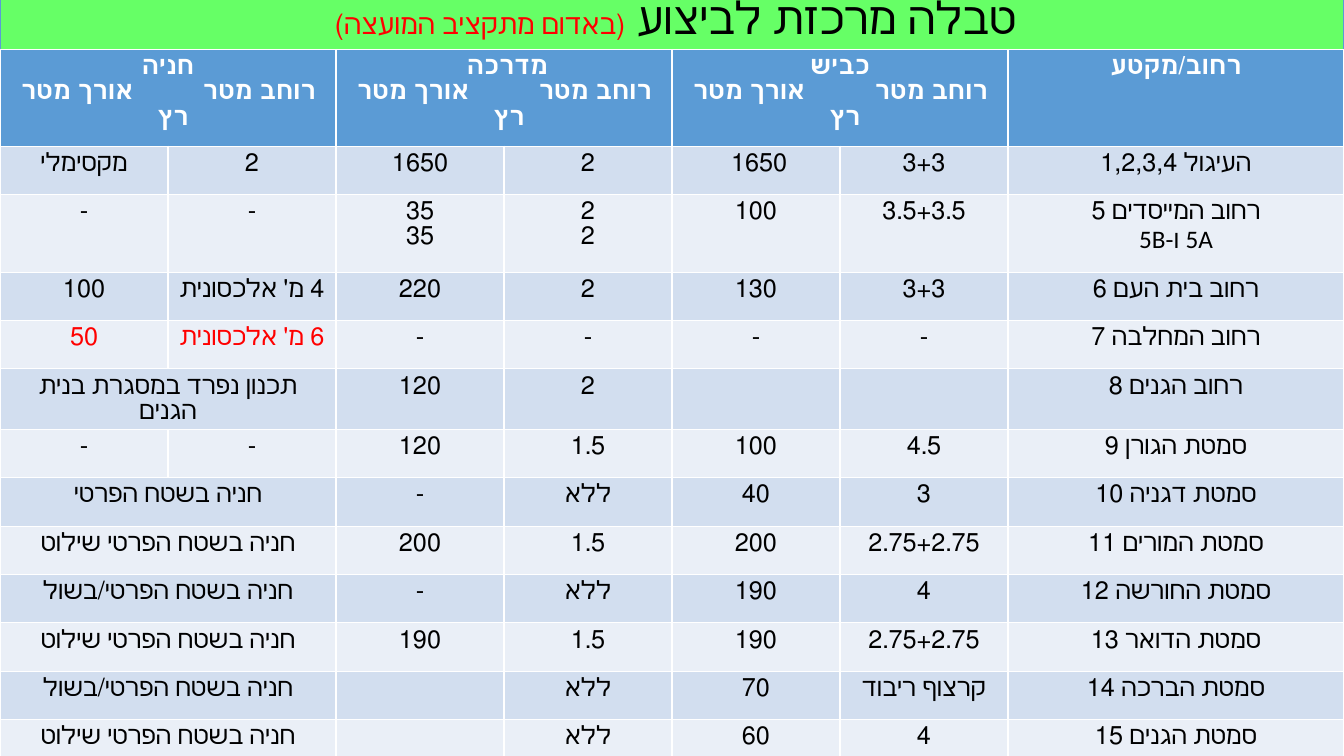
from pptx import Presentation
from pptx import util as u
from pptx.dml.color import RGBColor
from pptx.enum import lang, text
from pptx.oxml import parse_xml
from pptx.oxml.ns import nsdecls

FONT = "Calibri"
BLACK, WHITE, RED = "000000", "FFFFFF", "FF0000"
GREEN, BLUE, BANDS = "66FF66", "5B9BD5", ("D2DEEF", "EAEFF7")
WIDTH, HEIGHT, TABLE_TOP = 13.33, 7.5, 0.49
UNIT = WIDTH / 8
COLUMN_UNITS = [1] * 6 + [2]
HEADER_H, ROW_H, TALL_ROW, TALL_H = 0.96, 0.48, 2, 0.77
GROUPS = ["חניה", "מדרכה ", "כביש"]
MEASURES = "רוחב מטר\tאורך מטר"
MERGED = None
ROWS = [
    ["מקסימלי", "2", "1650", "2", "1650 ", "3+3", "העיגול 1,2,3,4"],
    ["-", "-", "35\n35", "2\n2", "100", "3.5+3.5", "רחוב המייסדים 5\n5A ו-5B"],
    ["100", "4 מ' אלכסונית", "220", "2", "130", "3+3", "רחוב בית העם 6"],
    ["50", "6 מ' אלכסונית", "-", "-", "-", "-", "רחוב המחלבה 7"],
    ["תכנון נפרד במסגרת בנית הגנים", MERGED, "120", "2", "", "", "רחוב הגנים 8"],
    ["-", "-", "120", "1.5", "100", "4.5", "סמטת הגורן 9"],
    ["חניה בשטח הפרטי", MERGED, "-", "ללא", "40", "3", "סמטת דגניה 10"],
    ["חניה בשטח הפרטי שילוט", MERGED, "200", "1.5", "200", "2.75+2.75", "סמטת המורים 11"],
    ["חניה בשטח הפרטי/בשול", MERGED, "-", "ללא", "190", "4", "סמטת החורשה 12"],
    ["חניה בשטח הפרטי שילוט", MERGED, "190", "1.5", "190", "2.75+2.75", "סמטת הדואר 13"],
    ["חניה בשטח הפרטי/בשול", MERGED, "", "ללא", "70", "קרצוף ריבוד", "סמטת הברכה 14"],
    ["חניה בשטח הפרטי שילוט", MERGED, "", "ללא", "60", "4", "סמטת הגנים 15"],
]
RED_CELLS = {(4, 0), (4, 1)}


def rgb(value):
    """Turn a hex string into a colour."""
    return RGBColor.from_string(value)


def paint(fill, color):
    """Give a fill one solid colour."""
    fill.solid()
    fill.fore_color.rgb = rgb(color)


def set_rtl(p, align=text.PP_ALIGN.CENTER):
    """Make a paragraph run from right to left."""
    p.alignment = align
    p._p.get_or_add_pPr().set("rtl", "1")


def add_run(p, words, size, color, bold=False):
    """Add one formatted Hebrew run to a paragraph."""
    r = p.add_run()
    r.text = words
    r.font.name, r.font.size, r.font.bold = FONT, u.Pt(size), bold
    r.font.color.rgb = rgb(color)
    r.font.language_id = lang.MSO_LANGUAGE_ID.HEBREW


def add_tab_stop(p, margin, position):
    """Indent a right-to-left paragraph and set its tab stop."""
    pPr = p._p.get_or_add_pPr()
    for side in ("marL", "marR"):
        pPr.set(side, str(u.Inches(margin)))
    pPr.append(parse_xml(f'<a:tabLst {nsdecls("a")}><a:tab algn="r" '
                         f'pos="{u.Inches(position)}"/></a:tabLst>'))


def fill_cell(cell, lines, fill, color, bold=False):
    """Colour a cell and write its lines, spreading a tabbed line."""
    paint(cell.fill, fill)
    tf = cell.text_frame
    for i, line in enumerate(lines):
        p = tf.add_paragraph() if i else tf.paragraphs[0]
        tabbed = "\t" in line
        set_rtl(p, text.PP_ALIGN.RIGHT if tabbed else text.PP_ALIGN.CENTER)
        if tabbed:
            add_tab_stop(p, 0.1, 1.81)
        if line:
            add_run(p, line, 18, color, bold)


def add_title(s):
    """Format the title placeholder as the green band."""
    sp = s.shapes.title
    sp.left, sp.top = 0, u.Inches(-0.01)
    sp.width, sp.height = u.Inches(WIDTH), u.Inches(0.5)
    paint(sp.fill, GREEN)
    sp.line.color.rgb, sp.line.width = rgb(BLUE), u.Pt(0.75)
    tf = sp.text_frame
    tf.word_wrap, tf.auto_size = True, text.MSO_AUTO_SIZE.NONE
    tf.vertical_anchor = text.MSO_ANCHOR.BOTTOM
    p = tf.paragraphs[0]
    set_rtl(p)
    p.line_spacing = 0.9
    add_run(p, "טבלה מרכזת לביצוע ", 32, BLACK)
    add_run(p, "(באדום מתקציב המועצה) ", 20, RED)


def add_works_table(s):
    """Add the table of streets with its header and merged cells."""
    table = s.shapes.add_table(
        len(ROWS) + 1, len(COLUMN_UNITS), 0, u.Inches(TABLE_TOP),
        u.Inches(WIDTH), u.Inches(HEIGHT - TABLE_TOP)).table
    for column, units in zip(table.columns, COLUMN_UNITS):
        column.width = u.Inches(units * UNIT)
    for i, row in enumerate(table.rows):
        row.height = u.Inches({0: HEADER_H, TALL_ROW: TALL_H}.get(i, ROW_H))
    for i, group in enumerate(GROUPS):
        cell = table.cell(0, 2 * i)
        cell.merge(table.cell(0, 2 * i + 1))
        fill_cell(cell, [group, MEASURES, "רץ"], BLUE, WHITE, True)
    fill_cell(table.cell(0, 6), ["רחוב/מקטע"], BLUE, WHITE, True)
    for i, row in enumerate(ROWS, 1):
        for j, words in enumerate(row):
            if words is MERGED:
                table.cell(i, j - 1).merge(table.cell(i, j))
                continue
            color = RED if (i, j) in RED_CELLS else BLACK
            fill_cell(table.cell(i, j), words.split("\n"), BANDS[(i - 1) % 2], color)


def main():
    """Build the slide and save it."""
    prs = Presentation()
    prs.slide_width, prs.slide_height = u.Inches(WIDTH), u.Inches(HEIGHT)
    s = prs.slides.add_slide(prs.slide_layouts[0])
    subtitle = s.placeholders[1]._element
    subtitle.getparent().remove(subtitle)
    add_title(s)
    add_works_table(s)
    prs.save("out.pptx")


if __name__ == "__main__":
    main()
